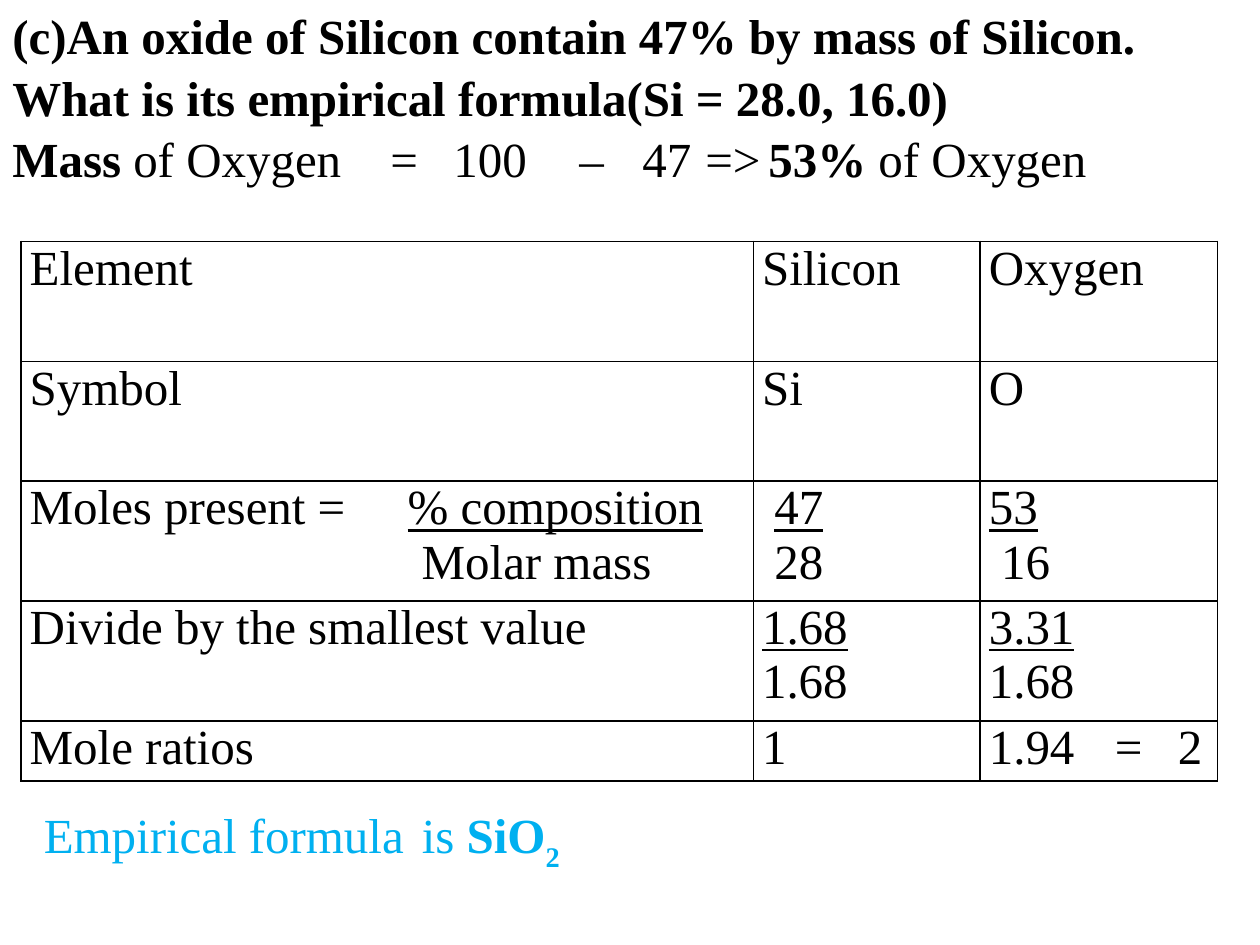
from dataclasses import dataclass

from lxml import etree
from pptx import Presentation
from pptx.dml.color import RGBColor
from pptx.enum.text import MSO_ANCHOR
from pptx.oxml.ns import qn
from pptx.util import Pt

MIDDLE = MSO_ANCHOR.MIDDLE
BLANK_LAYOUT = 6


@dataclass(frozen=True)
class Theme:
    font: str = "Times New Roman"
    size: float = 28
    ink: str = "000000"
    answer: str = "00B0F0"
    border: float = 1


@dataclass(frozen=True)
class Line:
    """One paragraph: (text, style) runs; style letters b, u, s = bold, underline, subscript."""
    runs: tuple
    tabs: tuple = ()
    indent: float = 0
    spacing: float = 1


THEME = Theme()

QUESTION = (
    Line((("(c)An oxide of Silicon contain 47% by mass of Silicon. "
           "What is its empirical formula(Si = 28.0, 16.0)", "b"),), spacing=1.05),
    Line((("Mass", "b"), (" of Oxygen\t=\t100\t–\t47\t=>\t", ""),
          ("53%", "b"), (" of Oxygen", "")),
         tabs=(202, 231.5, 287.5, 315.5, 357, 403), spacing=1.05),
)
ANSWER = (Line((("Empirical formula\tis ", ""), ("SiO", "b"), ("2", "bs")), tabs=(227,)),)


def plain(text):
    return (Line(((text, ""),)),)


def fraction(top, bottom, top_indent=0, bottom_indent=0):
    return (Line(((top, "u"),), indent=top_indent),
            Line(((bottom, ""),), indent=bottom_indent))


MOLES_LABEL = (
    Line((("Moles present =\t", ""), ("% composition", "u")), tabs=(208.5,)),
    Line((("Molar mass", ""),), indent=224),
)
RATIO = (Line((("1.94\t=\t2", ""),), tabs=(70.5, 100)),)

WORKING = (
    (plain("Element"), plain("Silicon"), plain("Oxygen")),
    (plain("Symbol"), plain("Si"), plain("O")),
    (MOLES_LABEL, fraction("47", "28", 7, 7), fraction("53", "16", 0, 7)),
    (plain("Divide by the smallest value"), fraction("1.68", "1.68"), fraction("3.31", "1.68")),
    (plain("Mole ratios"), plain("1"), RATIO),
)
COLUMN_WIDTHS = (418.5, 129.6, 135.6)
ROW_HEIGHTS = (68.5,) * 4 + (34.25,)


def format_run(run, style, color):
    font = run.font
    font.name, font.size = THEME.font, Pt(THEME.size)
    font.bold, font.underline = "b" in style, "u" in style
    font.color.rgb = RGBColor.from_string(color)
    if "s" in style:
        run._r.get_or_add_rPr().set("baseline", "-30000")


def write_lines(frame, lines, color):
    for number, line in enumerate(lines):
        paragraph = frame.add_paragraph() if number else frame.paragraphs[0]
        paragraph.line_spacing = line.spacing
        properties = paragraph._p.get_or_add_pPr()
        properties.set("marL", str(Pt(line.indent)))
        properties.set("indent", "0")
        if line.tabs:
            stops = etree.SubElement(properties, qn("a:tabLst"))
            for position in line.tabs:
                etree.SubElement(stops, qn("a:tab"), pos=str(Pt(position)), algn="l")
        for text, style in line.runs:
            run = paragraph.add_run()
            run.text = text
            format_run(run, style, color)


def add_text(slide, lines, left, top, width, height, color, anchor=None):
    frame = slide.shapes.add_textbox(Pt(left), Pt(top), Pt(width), Pt(height)).text_frame
    frame.word_wrap = True
    if anchor is not None:
        frame.vertical_anchor = anchor
    write_lines(frame, lines, color)


def add_borders(cell):
    properties = cell._tc.get_or_add_tcPr()
    for order, side in enumerate(("a:lnL", "a:lnR", "a:lnT", "a:lnB")):
        border = etree.Element(qn(side), w=str(Pt(THEME.border)))
        fill = etree.SubElement(border, qn("a:solidFill"))
        etree.SubElement(fill, qn("a:srgbClr"), val=THEME.ink)
        properties.insert(order, border)


def add_working_table(slide, left, top):
    table = slide.shapes.add_table(
        len(WORKING), len(COLUMN_WIDTHS), Pt(left), Pt(top),
        Pt(sum(COLUMN_WIDTHS)), Pt(sum(ROW_HEIGHTS))).table
    table.first_row = table.horz_banding = False
    for column, width in zip(table.columns, COLUMN_WIDTHS):
        column.width = Pt(width)
    for row, height, contents in zip(table.rows, ROW_HEIGHTS, WORKING):
        row.height = Pt(height)
        for cell, lines in zip(row.cells, contents):
            cell.margin_left = cell.margin_right = Pt(5)
            cell.margin_top = cell.margin_bottom = Pt(0)
            cell.fill.background()
            add_borders(cell)
            write_lines(cell.text_frame, lines, THEME.ink)


def main():
    deck = Presentation()
    deck.slide_width, deck.slide_height = Pt(720), Pt(540)
    slide = deck.slides.add_slide(deck.slide_layouts[BLANK_LAYOUT])

    # Working of the empirical formula
    add_working_table(slide, 12, 138)
    # Question and mass of oxygen
    add_text(slide, QUESTION, 0, 0, 720, 108.7, THEME.ink, MIDDLE)
    # Result
    add_text(slide, ANSWER, 18, 456, 332, 41, THEME.answer)

    deck.save("out.pptx")


if __name__ == "__main__":
    main()
